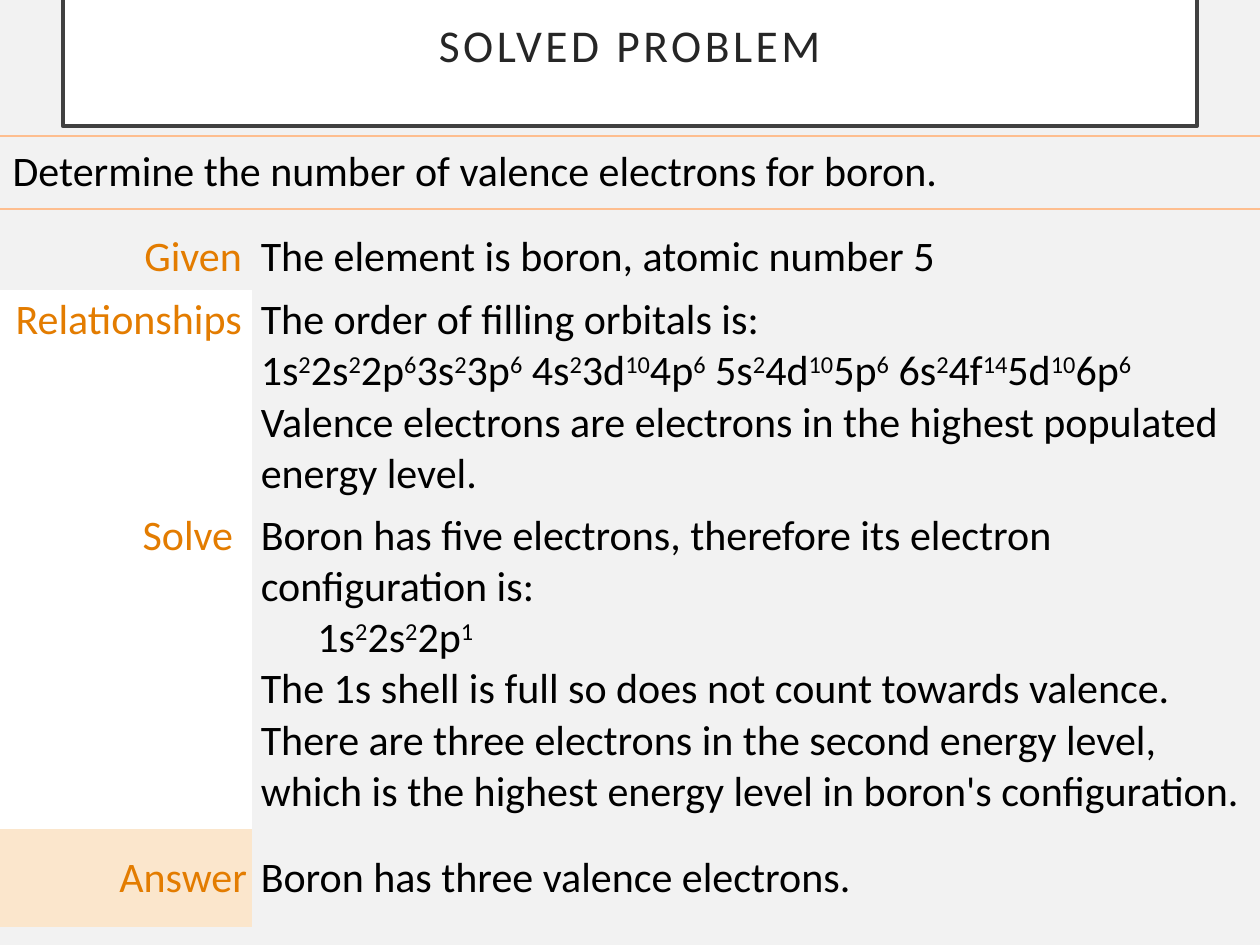
from dataclasses import dataclass
from typing import Any

from lxml.etree import SubElement
from pptx import Presentation
from pptx.dml.color import RGBColor
from pptx.enum.shapes import MSO_SHAPE
from pptx.enum.text import MSO_ANCHOR, PP_ALIGN
from pptx.oxml.ns import qn
from pptx.util import Inches, Pt

BLACK, ORANGE, WHITE, PEACH = "000000", "E37C00", "FFFFFF", "FBE6CC"
PLAIN_STYLE = "{2D5ABB26-0587-4C30-8999-92F81FD0307C}"
TEXT = {"size": Pt(24), "name": "Calibri"}
ANSWER_MARGINS = {"margin_left": 0.07, "margin_right": 0.08, "margin_top": 0.04, "margin_bottom": 0.04}


@dataclass
class Line:
    text: str
    indent: float = 0


@dataclass
class Step:
    label: str
    lines: list[Line]
    height: float
    fill: str | None = WHITE
    label_right: float = 0.08
    anchor: Any = MSO_ANCHOR.TOP


STEPS = [
    Step("Given", [Line("The element is boron, atomic number 5")], 0.5, None),
    Step("Relationships", [
        Line("The order of filling orbitals is:"),
        Line("1s|2|2s|2|2p|6|3s|2|3p|6| 4s|2|3d|10|4p|6| 5s|2|4d|10|5p|6| 6s|2|4f|14|5d|10|6p|6"),
        Line("Valence electrons are electrons in the highest populated energy level."),
    ], 1.71),
    Step("Solve", [
        Line("Boron has five electrons, therefore its electron configuration is:"),
        Line("1s|2|2s|2|2p|1", 0.45),
        Line("The 1s shell is full so does not count towards valence. There are three electrons "
             "in the second energy level, which is the highest energy level in boron's configuration."),
    ], 2.57, label_right=0.15),
    Step("Answer", [Line("Boron has three valence electrons.")], 0.78, PEACH, 0.04, MSO_ANCHOR.MIDDLE),
]


def color(value: str) -> RGBColor:
    return RGBColor.from_string(value)


def apply(target: Any, values: dict[str, Any]) -> None:
    for name, value in values.items():
        setattr(target, name, value)


def write(tf: Any, lines: list[Line], font_color: str, align: Any = PP_ALIGN.LEFT) -> None:
    for i, line in enumerate(lines):
        p = tf.paragraphs[0] if i == 0 else tf.add_paragraph()
        p.alignment = align
        if line.indent:
            p._p.get_or_add_pPr().set("marL", str(Inches(line.indent)))
        for j, part in enumerate(line.text.split("|")):
            r = p.add_run()
            r.text = part
            apply(r.font, TEXT)
            r.font.color.rgb = color(font_color)
            if j % 2:
                r._r.get_or_add_rPr().set("baseline", "30000")


def add_plain_table(s: Any, top: float, widths: list[float], heights: list[float]) -> Any:
    frame = s.shapes.add_table(len(heights), len(widths), Inches(0), Inches(top),
                               Inches(sum(widths)), Inches(sum(heights)))
    table = frame.table
    apply(table, {"first_row": False, "horz_banding": False})
    table._tbl.tblPr.find(qn("a:tableStyleId")).text = PLAIN_STYLE
    for column, width in zip(table.columns, widths):
        column.width = Inches(width)
    for row, height in zip(table.rows, heights):
        row.height = Inches(height)
    return table


def format_cell(cell: Any, fill: str | None, anchor: Any, margins: dict[str, float]) -> None:
    cell.vertical_anchor = anchor
    apply(cell, {name: Inches(value) for name, value in margins.items()})
    if fill:
        cell.fill.solid()
        cell.fill.fore_color.rgb = color(fill)
    else:
        cell.fill.background()


def add_rules(cell: Any, line_color: str, width: float) -> None:
    tcPr = cell._tc.get_or_add_tcPr()
    for i, side in enumerate(("a:lnT", "a:lnB")):
        ln = SubElement(tcPr, qn(side), w=str(Pt(width)))
        SubElement(SubElement(ln, qn("a:solidFill")), qn("a:srgbClr"), val=line_color)
        tcPr.insert(i, ln)


def add_title(s: Any, text: str) -> None:
    sp = s.shapes.add_shape(MSO_SHAPE.RECTANGLE, Inches(0.5), Inches(-0.25), Inches(9), Inches(1.25))
    sp.shadow.inherit = False
    sp.fill.solid()
    sp.fill.fore_color.rgb = color(WHITE)
    sp.line.color.rgb = color("404040")
    sp.line.width = Pt(2.5)
    tf = sp.text_frame
    apply(tf, {"word_wrap": True, "vertical_anchor": MSO_ANCHOR.MIDDLE})
    apply(tf, {f"margin_{side}": Inches(0.2) for side in ("left", "right", "top", "bottom")})
    write(tf, [Line(text)], "262626", PP_ALIGN.CENTER)
    p = tf.paragraphs[0]
    p.line_spacing = 0.9
    r = p.runs[0]
    r.font.size = Pt(26)
    r._r.get_or_add_rPr().set("spc", "200")


def add_problem(s: Any, text: str) -> None:
    cell = add_plain_table(s, 1.08, [10], [0.58]).cell(0, 0)
    format_cell(cell, None, MSO_ANCHOR.MIDDLE, {})
    add_rules(cell, "FEBE8F", 1.5)
    write(cell.text_frame, [Line(text)], BLACK)


def add_solution(s: Any, steps: list[Step]) -> None:
    table = add_plain_table(s, 1.8, [2, 8], [step.height for step in steps])
    for i, step in enumerate(steps):
        label, answer = table.cell(i, 0), table.cell(i, 1)
        label_margins = ANSWER_MARGINS | {"margin_left": 0.08, "margin_right": step.label_right}
        format_cell(label, step.fill, step.anchor, label_margins)
        format_cell(answer, None, step.anchor, ANSWER_MARGINS)
        write(label.text_frame, [Line(step.label)], ORANGE, PP_ALIGN.RIGHT)
        write(answer.text_frame, step.lines, BLACK)


def main() -> None:
    prs = Presentation()
    apply(prs, {"slide_width": Inches(10), "slide_height": Inches(7.5)})
    s = prs.slides.add_slide(prs.slide_layouts[6])
    s.background.fill.solid()
    s.background.fill.fore_color.rgb = color("F2F2F2")
    add_title(s, "SOLVED PROBLEM")
    add_problem(s, "Determine the number of valence electrons for boron.")
    add_solution(s, STEPS)
    prs.save("out.pptx")


if __name__ == "__main__":
    main()
